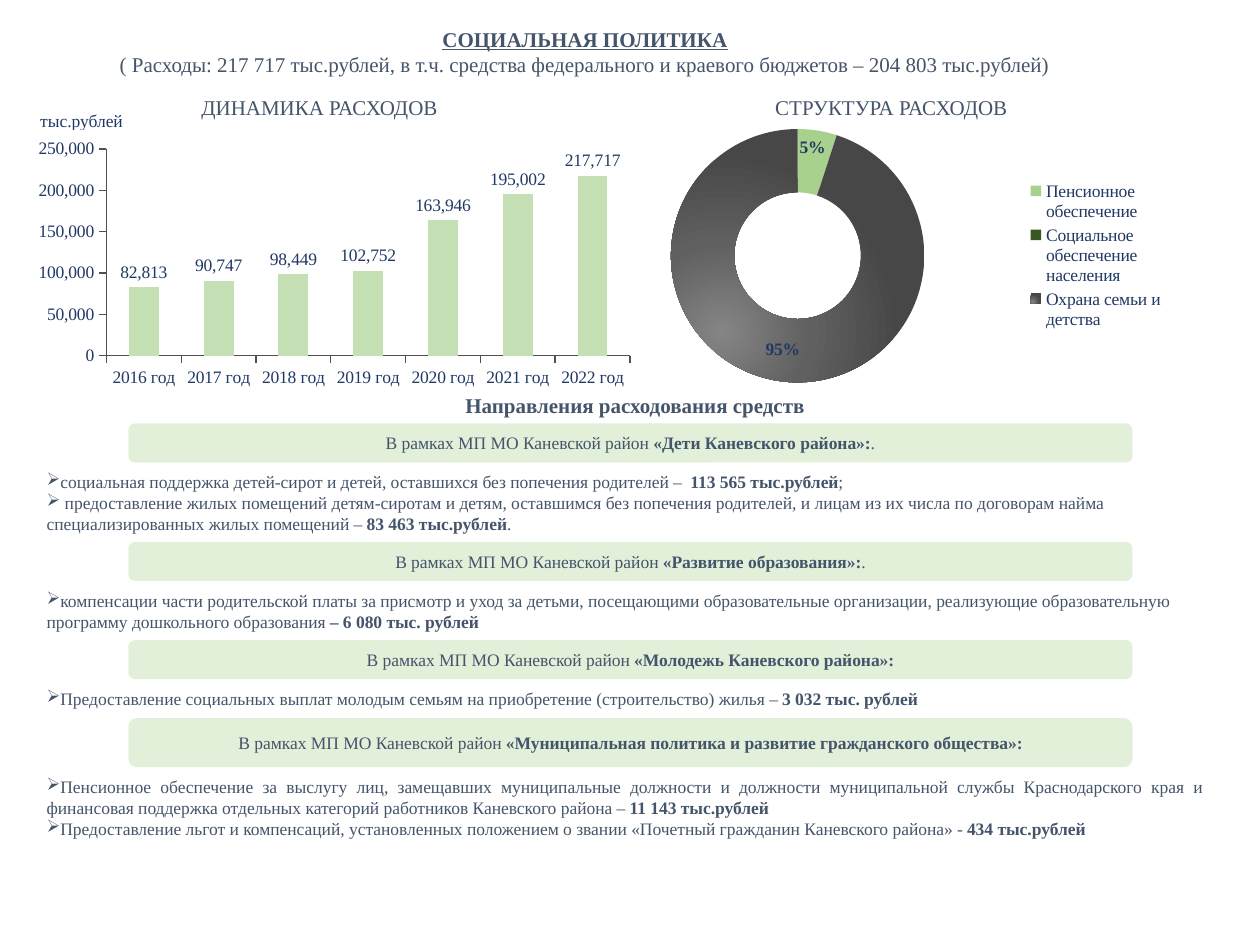
from lxml import etree
from pptx import Presentation
from pptx.chart.data import CategoryChartData
from pptx.dml.color import RGBColor
from pptx.enum.chart import XL_CHART_TYPE, XL_LEGEND_POSITION, XL_TICK_MARK
from pptx.enum.shapes import MSO_SHAPE
from pptx.enum.text import MSO_ANCHOR, PP_ALIGN
from pptx.oxml import parse_xml
from pptx.oxml.ns import nsdecls, qn
from pptx.util import Pt

SLATE = RGBColor(0x44, 0x54, 0x6A)
NAVY = RGBColor(0x20, 0x38, 0x64)
AXIS_GRAY = RGBColor(0x50, 0x50, 0x50)
PALE_GREEN = RGBColor(0xE2, 0xF0, 0xD9)
BAR_GREEN = RGBColor(0xC5, 0xE0, 0xB4)
LIGHT_GREEN = RGBColor(0xA9, 0xD1, 0x8E)
DARK_GREEN = RGBColor(0x38, 0x57, 0x23)
FONT = "Times New Roman"


def set_font(font, size, color, bold=None):
    font.name, font.size, font.bold = FONT, Pt(size), bold
    font.color.rgb = color


def set_layout(parent, index, inner=False, **values):
    """Place a chart part by hand, in fractions of the chart."""
    for old in parent.findall(qn("c:layout")):
        parent.remove(old)
    target = '<c:layoutTarget val="inner"/>' if inner else ""
    modes = '<c:xMode val="edge"/><c:yMode val="edge"/>' if "w" in values else ""
    parts = "".join(f'<c:{name} val="{value}"/>' for name, value in values.items())
    parent.insert(index, parse_xml(
        f'<c:layout {nsdecls("c")}><c:manualLayout>{target}{modes}{parts}'
        '</c:manualLayout></c:layout>'))


presentation = Presentation()
presentation.slide_width, presentation.slide_height = Pt(720), Pt(540)
slide = presentation.slides.add_slide(presentation.slide_layouts[5])
shapes = slide.shapes

# Title
title = shapes.title
title.left, title.top, title.width, title.height = Pt(22.3), Pt(11.5), Pt(624), Pt(36)
frame = title.text_frame
frame.vertical_anchor = MSO_ANCHOR.TOP
frame.text = ("СОЦИАЛЬНАЯ ПОЛИТИКА\n( Расходы: 217 717 тыс.рублей, в т.ч. средства "
              "федерального и краевого бюджетов – 204 803 тыс.рублей)")
for paragraph, strong in zip(frame.paragraphs, (True, False)):
    paragraph.alignment = PP_ALIGN.CENTER
    set_font(paragraph.font, 12, SLATE, strong)
    paragraph.font.underline = strong

# Captions
for text, left, top, width, margin, bold in (
        ("ДИНАМИКА РАСХОДОВ", 106.6, 50.4, 152, 3.6, False),
        ("СТРУКТУРА РАСХОДОВ", 433.4, 50.4, 152, 3.6, False),
        ("Направления расходования средств", 219.6, 219.6, 286.6, 5, True)):
    caption = shapes.add_textbox(Pt(left), Pt(top), Pt(width), Pt(22))
    frame = caption.text_frame
    frame.word_wrap = False
    frame.margin_top = frame.margin_bottom = Pt(margin)
    paragraph = frame.paragraphs[0]
    paragraph.text = text
    paragraph.alignment = PP_ALIGN.CENTER
    set_font(paragraph.font, 12, SLATE, bold)

# Unit of the column chart
table = shapes.add_table(1, 1, Pt(22.3), Pt(62), Pt(72.7), Pt(13)).table
table.first_row = table.horz_banding = False
cell = table.cell(0, 0)
cell.fill.background()
cell.vertical_anchor = MSO_ANCHOR.BOTTOM
cell.margin_left = cell.margin_right = cell.margin_top = Pt(0.7)
cell.margin_bottom = Pt(0)
cell.text = "тыс.рублей"
set_font(cell.text_frame.paragraphs[0].font, 10, NAVY, False)

# Programmes: heading (top, height, runs), then list (height, alignment, items).
# Runs alternate between regular and bold.
PROGRAMME = "В рамках МП МО Каневской район "
programmes = [
    (242, 22.3, (PROGRAMME, "«Дети Каневского района»:", "."), 45.4, PP_ALIGN.LEFT, [
        ("социальная поддержка детей-сирот и детей, оставшихся без попечения родителей –  ",
         "113 565 тыс.рублей", ";"),
        (" предоставление жилых помещений детям-сиротам и детям, оставшимся без попечения "
         "родителей, и лицам из их числа по договорам найма специализированных жилых "
         "помещений – ", "83 463 тыс.рублей", ".")]),
    (309.6, 22.3, (PROGRAMME, "«Развитие образования»:", "."), 33.8, PP_ALIGN.LEFT, [
        ("компенсации части родительской платы за присмотр и уход за детьми, посещающими "
         "образовательные организации, реализующие образовательную программу дошкольного "
         "образования ", "– 6 080 тыс. рублей")]),
    (365.8, 22.3, (PROGRAMME, "«Молодежь Каневского района»:"), 22.3, PP_ALIGN.LEFT, [
        ("Предоставление социальных выплат молодым семьям на приобретение (строительство) "
         "жилья – ", "3 032 тыс. рублей")]),
    (410.4, 28, (PROGRAMME, "«Муниципальная политика и развитие гражданского общества»:"),
     46.8, PP_ALIGN.JUSTIFY, [
        ("Пенсионное обеспечение за выслугу лиц, замещавших муниципальные должности и "
         "должности муниципальной службы Краснодарского края и финансовая поддержка отдельных "
         "категорий работников Каневского района – ", "11 143 тыс.рублей"),
        ("Предоставление льгот и компенсаций, установленных положением о звании «Почетный "
         "гражданин Каневского района» - ", "434 тыс.рублей")]),
]
for top, height, heading, list_height, list_alignment, items in programmes:
    band = shapes.add_shape(MSO_SHAPE.ROUNDED_RECTANGLE, Pt(73.4), Pt(top), Pt(573.8), Pt(height))
    band.shadow.inherit = False
    band.fill.solid()
    band.fill.fore_color.rgb = PALE_GREEN
    band.line.fill.background()
    band.text_frame.vertical_anchor = MSO_ANCHOR.MIDDLE
    details = shapes.add_textbox(Pt(16.6), Pt(top + height), Pt(680.4), Pt(list_height))
    for shape, rows, alignment in ((band, [heading], PP_ALIGN.CENTER),
                                   (details, items, list_alignment)):
        frame = shape.text_frame
        frame.word_wrap = True
        frame.margin_left = frame.margin_right = Pt(10)
        frame.margin_top = frame.margin_bottom = Pt(5)
        for index, runs in enumerate(rows):
            paragraph = frame.add_paragraph() if index else frame.paragraphs[0]
            paragraph.alignment = alignment
            if shape is details:
                properties = paragraph._p.get_or_add_pPr()
                etree.SubElement(properties, qn("a:buChar")).set("char", "➢")
            for position, text in enumerate(runs):
                run = paragraph.add_run()
                run.text = text
                set_font(run.font, 10, SLATE, position % 2 == 1)

# Structure of spending
data = CategoryChartData()
data.categories = ["Пенсионное обеспечение", "Социальное обеспечение населения",
                   "Охрана семьи и детства"]
data.add_series("Структура расходов", (5, 0, 95))
chart = shapes.add_chart(XL_CHART_TYPE.DOUGHNUT, Pt(361.4), Pt(64), Pt(309.6), Pt(162.7),
                         data).chart
chart.has_title = False
chart.font.name, chart.font.size = "Arial", Pt(10)
chart.has_legend = True
chart.legend.position = XL_LEGEND_POSITION.RIGHT
chart.legend.include_in_layout = False
set_font(chart.legend.font, 10, NAVY)
set_layout(chart.legend._element, 1, x=0.72, y=0.23, w=0.27, h=0.55)
set_layout(chart._chartSpace.chart.plotArea, 0, True, x=0.07, y=0.06, w=0.47, h=0.89)
series = chart.plots[0].series[0]
for point_index, color in enumerate((LIGHT_GREEN, DARK_GREEN)):
    fill = series.points[point_index].format.fill
    fill.solid()
    fill.fore_color.rgb = color
family = series.points[2].format
family.fill.gradient()
gradient = family.fill._xPr.find(qn("a:gradFill"))
family.fill._xPr.replace(gradient, parse_xml(
    f'<a:gradFill {nsdecls("a")} rotWithShape="1"><a:gsLst>'
    '<a:gs pos="0"><a:srgbClr val="858585"/></a:gs>'
    '<a:gs pos="50000"><a:srgbClr val="606060"/></a:gs>'
    '<a:gs pos="100000"><a:srgbClr val="474747"/></a:gs></a:gsLst>'
    '<a:path path="circle"><a:fillToRect l="20000" t="80000" r="80000" b="20000"/></a:path>'
    '</a:gradFill>'))

# Share labels
labels = series.data_labels
labels.show_percentage, labels.show_value = True, False
labels.number_format, labels.number_format_is_linked = "0%", False
set_font(labels.font, 10, NAVY, True)
set_font(series.points[0].data_label.font, 10, NAVY, True)
paragraph = series.points[1].data_label.text_frame.paragraphs[0]
for text, bold in (("0", True), (",01%", False)):
    run = paragraph.add_run()
    run.text = text
    set_font(run.font, 10, NAVY, bold)
pension_label, social_label = labels._element.findall(qn("c:dLbl"))
pension_label.find(qn("c:showVal")).set("val", "0")
pension_label.find(qn("c:showPercent")).set("val", "1")
set_layout(pension_label, 1, x=0, y=-0.05)
set_layout(social_label, 1, x=0.06, y=-0.14)

# Spending by year
data = CategoryChartData(number_format="#,##0")
data.categories = [f"{year} год" for year in range(2016, 2023)]
data.add_series("Расходы", (82813, 90747, 98449, 102752, 163946, 195002, 217717))
chart = shapes.add_chart(XL_CHART_TYPE.COLUMN_CLUSTERED, Pt(15.1), Pt(76.3), Pt(352), Pt(147.6),
                         data).chart
chart.has_title = chart.has_legend = False
set_font(chart.font, 10, NAVY)
set_layout(chart._chartSpace.chart.plotArea, 0, True, x=0.13, y=0.06, w=0.85, h=0.8)
for axis in (chart.category_axis, chart.value_axis):
    axis.has_major_gridlines = False
    axis.major_tick_mark = XL_TICK_MARK.OUTSIDE
    axis.format.line.color.rgb = AXIS_GRAY
value_axis = chart.value_axis
value_axis.minimum_scale, value_axis.maximum_scale, value_axis.major_unit = 0, 250000, 50000
value_axis.tick_labels.number_format = "#,##0"
value_axis.tick_labels.number_format_is_linked = False
plot = chart.plots[0]
plot.gap_width, plot.vary_by_categories = 150, False
series = plot.series[0]
series.format.fill.solid()
series.format.fill.fore_color.rgb = BAR_GREEN
series.data_labels.show_value = True
series.data_labels.number_format = "#,##0"
series.data_labels.number_format_is_linked = False
set_font(series.data_labels.font, 10, NAVY)

presentation.save("out.pptx")
